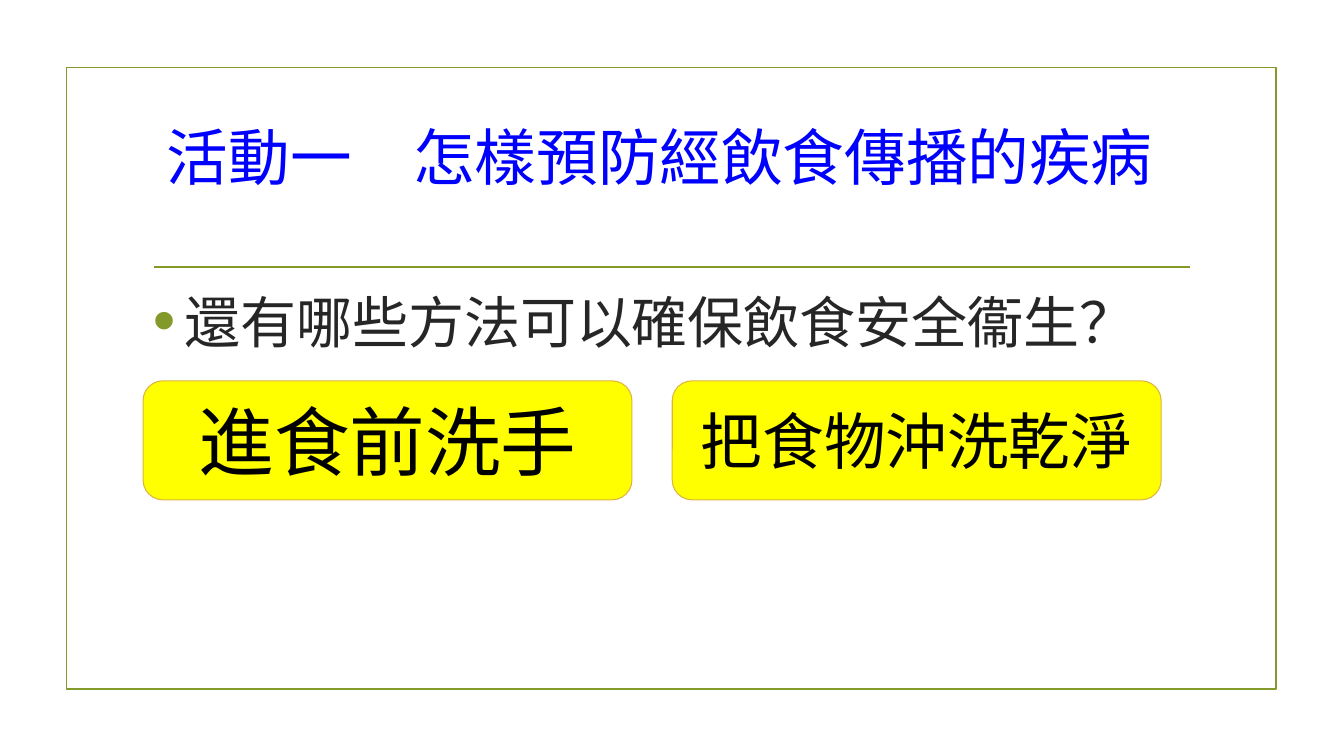
"""Build the slide on preventing diseases spread by food and drink."""
from lxml.etree import SubElement
from pptx import Presentation
from pptx.dml.color import RGBColor as RGB
from pptx.enum.shapes import MSO_CONNECTOR as LINK, MSO_SHAPE as KIND
from pptx.enum.text import MSO_ANCHOR as ANCHOR, PP_ALIGN as ALIGN
from pptx.oxml.ns import qn
from pptx.util import Pt

OLIVE = RGB(0x83, 0x99, 0x2A)
BLUE = RGB(0x00, 0x00, 0xFF)
DARK = RGB(0x26, 0x26, 0x26)
BLACK = RGB(0x00, 0x00, 0x00)
YELLOW = RGB(0xFF, 0xFF, 0x00)
GOLD = RGB(0xDE, 0xB3, 0x40)
SANS = "Noto Sans CJK SC"


def write(shape, text, size, color, latin=SANS, asian=SANS, align=ALIGN.CENTER, anchor=ANCHOR.MIDDLE):
    """Put one styled run in the shape and return its paragraph."""
    frame = shape.text_frame
    frame.word_wrap = True
    frame.vertical_anchor = anchor
    para = frame.paragraphs[0]
    para.alignment = align
    run = para.add_run()
    run.text = text
    run.font.size = Pt(size)
    run.font.color.rgb = color
    run.font.name = latin
    SubElement(run.font._element, qn("a:ea"), typeface=asian)
    return para


deck = Presentation()
deck.slide_width, deck.slide_height = Pt(960), Pt(540)
slide = deck.slides.add_slide(deck.slide_layouts[6])
shapes = slide.shapes

frame = shapes.add_shape(KIND.RECTANGLE, Pt(47.5), Pt(48.2), Pt(864), Pt(444.2))
frame.shadow.inherit = False
frame.fill.background()
frame.line.color.rgb = OLIVE
frame.line.width = Pt(1.25)

rule = shapes.add_connector(LINK.STRAIGHT, Pt(110.2), Pt(190.8), Pt(850.3), Pt(190.8))
rule.line.color.rgb = OLIVE
rule.line.width = Pt(1.25)
SubElement(rule._element.spPr, qn("a:effectLst"))

body = shapes.add_textbox(Pt(102.2), Pt(201.6), Pt(756), Pt(261.4))
para = write(body, "還有哪些方法可以確保飲食安全衞生？", 40, DARK, "Arial", SANS, ALIGN.LEFT, ANCHOR.TOP)
para.space_after = Pt(6)
props = para._p.get_or_add_pPr()
props.set("marL", str(Pt(22.5)))
props.set("indent", str(Pt(-22.5)))
tint = SubElement(props, qn("a:buClr"))
SubElement(tint, qn("a:srgbClr"), val=str(OLIVE))
SubElement(props, qn("a:buSzPct"), val="115000")
SubElement(props, qn("a:buFont"), typeface="Arial")
SubElement(props, qn("a:buChar"), char="•")

title = shapes.add_textbox(Pt(93.6), Pt(70.6), Pt(756), Pt(81.4))
write(title, "活動一　怎樣預防經飲食傳播的疾病", 44, BLUE, "Noto Sans CJK JP", "Noto Sans CJK JP")

for col, (text, size) in enumerate([("進食前洗手", 54), ("把食物沖洗乾淨", 44)]):
    card = shapes.add_shape(KIND.ROUNDED_RECTANGLE, Pt(102.2 + 378 * col), Pt(272), Pt(349.2), Pt(85))
    card.shadow.inherit = False
    card.fill.solid()
    card.fill.fore_color.rgb = YELLOW
    card.line.color.rgb = GOLD
    card.line.width = Pt(0.75)
    write(card, text, size, BLACK)

deck.save("out.pptx")
